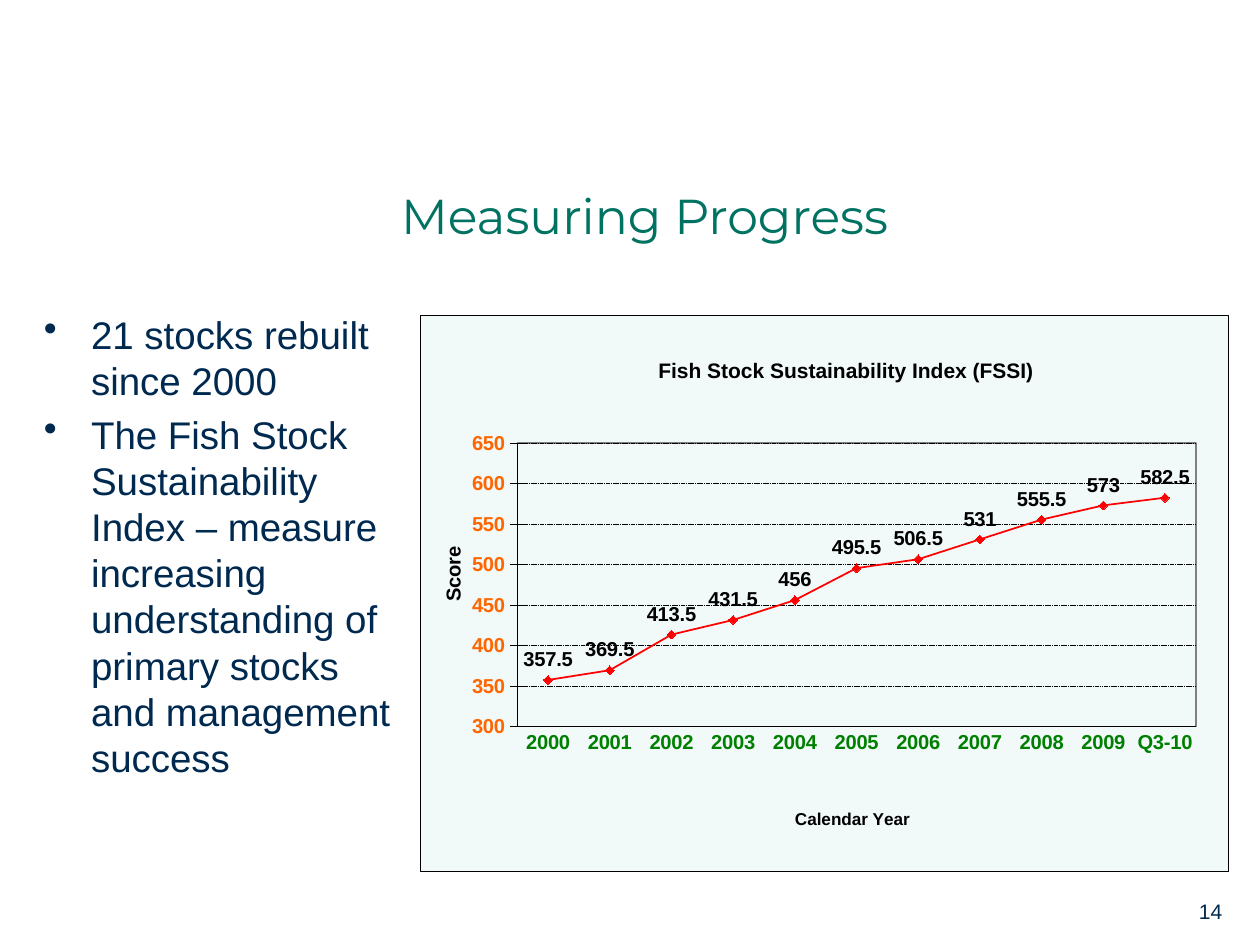
from typing import NamedTuple

from pptx import Presentation
from pptx.chart.data import CategoryChartData
from pptx.dml.color import RGBColor
from pptx.enum.chart import XL_CHART_TYPE, XL_LABEL_POSITION, XL_MARKER_STYLE, XL_TICK_MARK
from pptx.enum.dml import MSO_LINE
from pptx.enum.text import MSO_ANCHOR, PP_ALIGN
from pptx.oxml import parse_xml
from pptx.oxml.ns import nsdecls, qn
from pptx.util import Pt

NAVY = RGBColor(0x00, 0x29, 0x50)
TEAL = RGBColor(0x00, 0x72, 0x62)
BLACK = RGBColor(0x00, 0x00, 0x00)
GREEN = RGBColor(0x00, 0x80, 0x00)
ORANGE = RGBColor(0xFF, 0x66, 0x00)
RED = RGBColor(0xFF, 0x00, 0x00)
MINT = RGBColor(0xF1, 0xF9, 0xF9)
GREY = RGBColor(0x80, 0x80, 0x80)

LINE = XL_CHART_TYPE.LINE_MARKERS
ABOVE = XL_LABEL_POSITION.ABOVE
DIAMOND = XL_MARKER_STYLE.DIAMOND
NO_TICK, CROSS = XL_TICK_MARK.NONE, XL_TICK_MARK.CROSS
DASH = MSO_LINE.SQUARE_DOT
LEFT = PP_ALIGN.LEFT
TOP, MIDDLE = MSO_ANCHOR.TOP, MSO_ANCHOR.MIDDLE

YEARS = [str(year) for year in range(2000, 2010)] + ["Q3-10"]
SCORES = [357.5, 369.5, 413.5, 431.5, 456, 495.5, 506.5, 531, 555.5, 573, 582.5]
POINTS = [
    "21 stocks rebuilt since 2000",
    "The Fish Stock Sustainability Index – measure increasing understanding "
    "of primary stocks and management success",
]


class Box(NamedTuple):
    """Place of an object, in points."""
    left: float
    top: float
    width: float
    height: float

    def lengths(self):
        return [Pt(side) for side in self]


class Label(NamedTuple):
    """A chart caption; x and y are shares of the chart's size."""
    text: str
    size: float
    x: float
    y: float


def style(font, size: float, color: RGBColor, face="Arial", bold=False):
    font.name, font.size, font.bold = face, Pt(size), bold
    font.color.rgb = color


def write(frame, *lines: str, size=12, color=NAVY, face="Arial", bold=False,
          anchor=TOP, bullet=False, gap=0):
    frame.word_wrap = True
    frame.vertical_anchor = anchor
    for i, line in enumerate(lines):
        para = frame.add_paragraph() if i else frame.paragraphs[0]
        para.text = line
        para.alignment = LEFT
        if i:
            para.space_before = Pt(gap)
        if bullet:
            props = para._p.get_or_add_pPr()
            props.set("marL", str(Pt(27)))
            props.set("indent", str(-Pt(27)))
            props.append(parse_xml(f'<a:buChar {nsdecls("a")} char="•"/>'))
        style(para.runs[0].font, size, color, face, bold)


def lay_out(node, x: float, y: float, width=None, height=None):
    """Pin a chart title or plot area at shares of the chart's size."""
    for old in node.findall(qn("c:layout")):
        node.remove(old)
    inner = '<c:layoutTarget val="inner"/>' if width else ""
    sides = {"x": x, "y": y, "w": width, "h": height}
    modes = "".join(f'<c:{key}Mode val="edge"/>' for key in "xy")
    spots = "".join(f'<c:{key} val="{val}"/>' for key, val in sides.items() if val)
    layout = parse_xml(f'<c:layout {nsdecls("c")}><c:manualLayout>{inner}{modes}{spots}'
                       "</c:manualLayout></c:layout>")
    text = node.find(qn("c:tx"))
    node.insert(0 if text is None else 1, layout)


def area(fill: str, line: RGBColor, width: float):
    return parse_xml(f'<c:spPr {nsdecls("c", "a")}>{fill}<a:ln w="{Pt(width)}"><a:solidFill>'
                     f'<a:srgbClr val="{line}"/></a:solidFill></a:ln></c:spPr>')


def caption(title, label: Label):
    frame = title.text_frame
    frame.text = label.text
    style(frame.paragraphs[0].runs[0].font, label.size, BLACK, bold=True)
    lay_out(title._element, label.x, label.y)


def thin(line):
    line.color.rgb = BLACK
    line.width = Pt(0.25)


def set_axis(axis, color: RGBColor, tick, label: Label):
    axis.major_tick_mark, axis.minor_tick_mark = tick, NO_TICK
    style(axis.tick_labels.font, 11.5, color, bold=True)
    thin(axis.format.line)
    caption(axis.axis_title, label)


def add_index(slide, box: Box):
    data = CategoryChartData()
    data.categories = YEARS
    data.add_series("Series 1", SCORES)
    chart = slide.shapes.add_chart(LINE, *box.lengths(), data).chart
    chart.has_legend = False
    style(chart.font, 11.5, BLACK)
    caption(chart.chart_title, Label("Fish Stock Sustainability Index (FSSI)", 12, 0.29, 0.07))
    set_axis(chart.category_axis, GREEN, NO_TICK, Label("Calendar Year", 9.75, 0.46, 0.88))

    scale = chart.value_axis
    set_axis(scale, ORANGE, CROSS, Label("Score", 11.5, 0.02, 0.41))
    scale.minimum_scale, scale.maximum_scale, scale.major_unit = 300, 650, 50
    grid = scale.major_gridlines.format.line
    thin(grid)
    grid.dash_style = DASH

    plot = chart.plots[0]
    plot.vary_by_categories = False
    line = plot.series[0]
    line.smooth = False
    line.format.line.color.rgb = RED
    line.format.line.width = Pt(1)
    mark = line.marker
    mark.style, mark.size = DIAMOND, 5
    mark.format.fill.solid()
    mark.format.fill.fore_color.rgb = RED
    mark.format.line.color.rgb = RED
    labels = line.data_labels
    labels.show_value, labels.position = True, ABOVE
    style(labels.font, 11.5, BLACK, bold=True)

    root = chart._chartSpace
    field = root.chart.plotArea
    lay_out(field, 0.12, 0.23, 0.84, 0.51)
    field.append(area("<a:noFill/>", GREY, 0.75))
    fill = f'<a:solidFill><a:srgbClr val="{MINT}"/></a:solidFill>'
    root.chart.addnext(area(fill, BLACK, 0.25))


def main():
    deck = Presentation()
    deck.slide_width, deck.slide_height = Pt(720), Pt(540)
    slide = deck.slides.add_slide(deck.slide_layouts[5])

    title = slide.shapes.title
    title.left, title.top, title.width, title.height = Box(222, 90, 432, 66).lengths()
    write(title.text_frame, "Measuring Progress", size=28, color=TEAL,
          face="Montserrat", anchor=MIDDLE)

    body = slide.shapes.add_textbox(*Box(18, 174, 216, 336).lengths())
    write(body.text_frame, *POINTS, size=22, bullet=True, gap=4.4)

    add_index(slide, Box(240, 180, 462, 318))

    number = slide.shapes.add_textbox(*Box(678, 510, 60, 21.6).lengths())
    write(number.text_frame, "14")
    deck.save("out.pptx")


if __name__ == "__main__":
    main()
